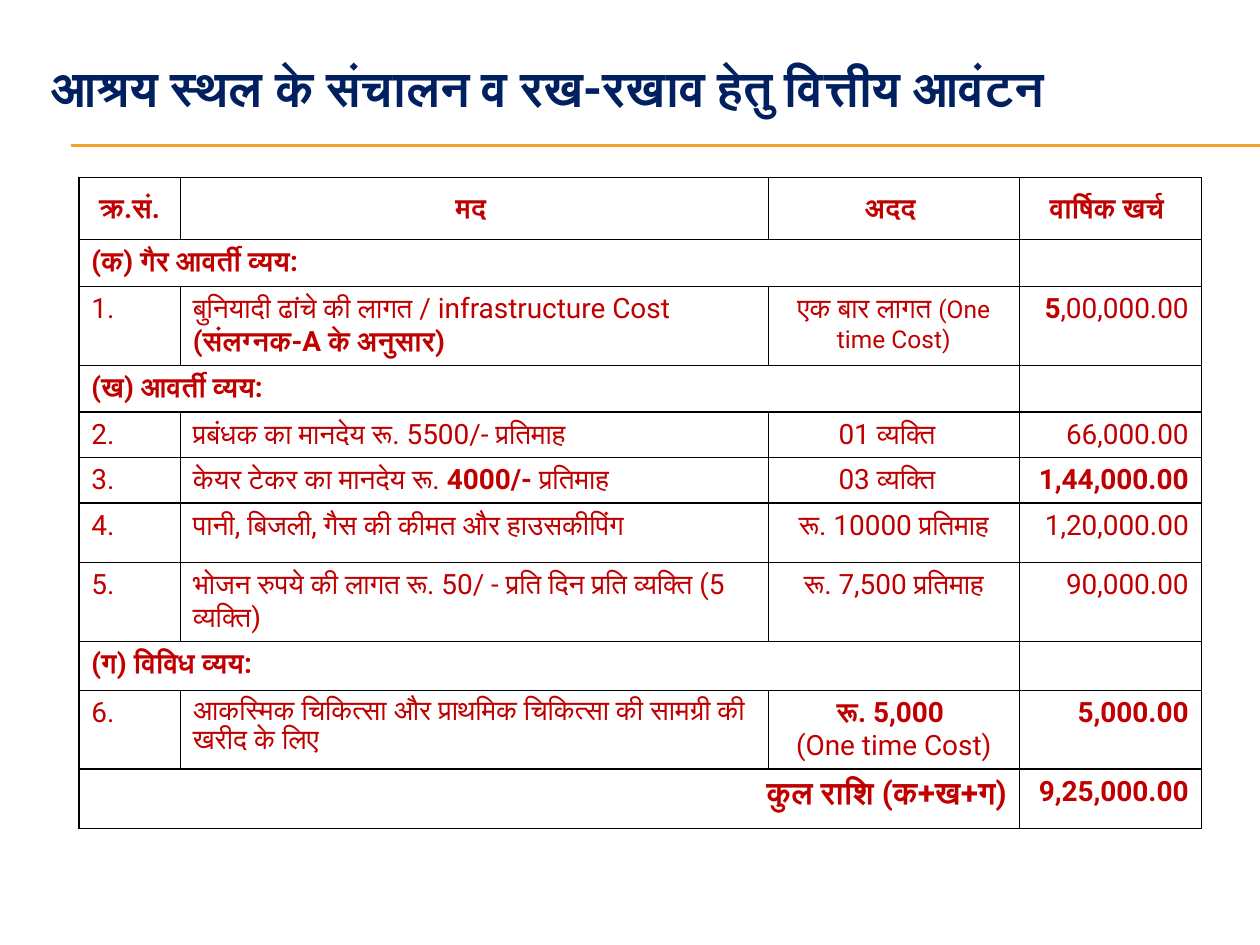
from dataclasses import dataclass

from lxml import etree
from pptx import Presentation
from pptx.dml.color import RGBColor
from pptx.enum.shapes import MSO_CONNECTOR
from pptx.enum.text import MSO_ANCHOR, PP_ALIGN
from pptx.oxml.ns import qn
from pptx.util import Pt

LEFT, CENTER, RIGHT = PP_ALIGN.LEFT, PP_ALIGN.CENTER, PP_ALIGN.RIGHT
TOP, MIDDLE = MSO_ANCHOR.TOP, MSO_ANCHOR.MIDDLE
STRAIGHT = MSO_CONNECTOR.STRAIGHT

COLORS = {"title": "002060", "text": "C00000", "rule": "F0A22E", "border": "000000"}
FONT = "Roboto"
BODY_SIZE = 16


@dataclass
class Span:
    text: str
    bold: bool = False
    size: float = BODY_SIZE


def bold(text, size=BODY_SIZE):
    return Span(text, True, size)


@dataclass
class Cell:
    paras: list
    align: int = LEFT
    anchor: int = TOP
    spacing: float = 1.0


def cell_of(*spans, **options):
    return Cell([list(spans)], **options)


def heading(text):
    return cell_of(bold(text), align=CENTER, anchor=MIDDLE)


def section(text):
    return [cell_of(bold(text)), None, None, cell_of()]


def item(number, purpose, quantity, cost):
    return [cell_of(Span(number)), purpose, quantity, cell_of(*cost, align=RIGHT)]


def centered(*spans):
    return cell_of(*spans, align=CENTER)


class SlideBuilder:
    def __init__(self, page):
        self.page = page

    def fill_para(self, para, spans, color, align, spacing=1.0):
        para.alignment = align
        para.line_spacing = spacing
        if not spans:
            etree.SubElement(para._p, qn("a:endParaRPr"), sz=str(BODY_SIZE * 100))
            return
        runs = []
        for span in spans:
            run = para.add_run()
            run.text = span.text
            runs.append(run)
        font = para.font
        font.name = FONT
        font.color.rgb = RGBColor.from_string(COLORS[color])
        properties = para._p.pPr.find(qn("a:defRPr"))
        etree.SubElement(properties, qn("a:cs"), typeface=FONT)
        for name, convert in (("bold", bool), ("size", Pt)):
            values = [getattr(span, name) for span in spans]
            if len(set(values)) == 1:
                setattr(font, name, convert(values[0]))
            else:
                for run, value in zip(runs, values):
                    setattr(run.font, name, convert(value))

    def title(self, text, left, top, width, height):
        box = self.page.shapes.title
        box.left, box.top, box.width, box.height = map(Pt, (left, top, width, height))
        frame = box.text_frame
        frame.word_wrap = True
        frame.vertical_anchor = MIDDLE
        self.fill_para(frame.paragraphs[0], [bold(text, 28)], "title", LEFT)

    def rule(self, left, right, y):
        line = self.page.shapes.add_connector(STRAIGHT, Pt(left), Pt(y), Pt(right), Pt(y))
        line.line.color.rgb = RGBColor.from_string(COLORS["rule"])
        line.line.width = Pt(0.75)
        etree.SubElement(line._element.spPr, qn("a:effectLst"))

    def borders(self, cell):
        properties = cell._tc.get_or_add_tcPr()
        for side in ("lnL", "lnR", "lnT", "lnB"):
            edge = etree.SubElement(properties, qn("a:" + side), w=str(Pt(1)))
            fill = etree.SubElement(edge, qn("a:solidFill"))
            etree.SubElement(fill, qn("a:srgbClr"), val=COLORS["border"])

    def table(self, rows, left, top, widths, heights):
        frame = self.page.shapes.add_table(
            len(rows), len(widths), Pt(left), Pt(top), Pt(sum(widths)), Pt(sum(heights)))
        table = frame.table
        table.first_row = False
        table.horz_banding = False
        for column, width in zip(table.columns, widths):
            column.width = Pt(width)
        for row_index, (contents, height) in enumerate(zip(rows, heights)):
            table.rows[row_index].height = Pt(height)
            for column_index, content in enumerate(contents):
                cell = table.cell(row_index, column_index)
                self.borders(cell)
                cell.fill.background()
                if content:
                    self.fill_cell(cell, content)
            if None in contents:
                table.cell(row_index, 0).merge(table.cell(row_index, contents.count(None)))

    def fill_cell(self, cell, content):
        cell.vertical_anchor = content.anchor
        frame = cell.text_frame
        for index, spans in enumerate(content.paras):
            para = frame.add_paragraph() if index else frame.paragraphs[0]
            self.fill_para(para, spans, "text", content.align, content.spacing)


ROWS = [
    [heading(text) for text in ("क्र.सं.", "मद ", "अदद ", "वार्षिक खर्च ")],
    section("(क) गैर आवर्ती व्यय:"),
    item("1.",
         cell_of(Span("बुनियादी ढांचे की लागत / infrastructure Cost "),
                 bold("(संलग्नक-A के अनुसार)")),
         centered(Span("एक बार लागत "), Span("(One time Cost)", size=14)),
         [bold("5"), Span(",00,000.00")]),
    section("(ख) आवर्ती व्यय:"),
    item("2.", cell_of(Span("प्रबंधक का मानदेय रू. 5500/- प्रतिमाह")),
         centered(Span("01 व्यक्ति  ")), [Span("66,000.00")]),
    item("3.",
         cell_of(Span("केयर टेकर का मानदेय रू. "), bold("4000/- "), Span("प्रतिमाह")),
         centered(Span("03 व्यक्ति  ")), [bold("1,44,000.00")]),
    item("4.", cell_of(Span("पानी, बिजली, गैस की कीमत और हाउसकीपिंग")),
         centered(Span("रू. 10000 प्रतिमाह")), [Span("1,20,000.00")]),
    item("5.",
         cell_of(Span("भोजन रुपये की लागत रू. 50/ - प्रति दिन प्रति व्यक्ति (5 व्यक्ति)")),
         centered(Span("रू. 7,500 प्रतिमाह")), [Span("90,000.00")]),
    section("(ग) विविध व्यय:"),
    item("6.",
         cell_of(Span("आकस्मिक चिकित्सा और प्राथमिक चिकित्सा की सामग्री की खरीद के लिए"),
                 spacing=0.9),
         Cell([[bold("रू. 5,000 ")], [Span("(One time Cost)")]], align=CENTER),
         [bold("5,000.00")]),
    [cell_of(bold("कुल राशि (क+ख+ग)", 18), align=RIGHT), None, None,
     cell_of(bold("9,25,000.00"), align=RIGHT)],
]


def main():
    deck = Presentation()
    deck.slide_width, deck.slide_height = Pt(720), Pt(540)
    builder = SlideBuilder(deck.slides.add_slide(deck.slide_layouts[5]))
    for y in (82.8, 83.4):
        builder.rule(40.5, 720, y)
    builder.title("आश्रय स्थल के संचालन व रख-रखाव हेतु वित्तीय आवंटन", 22.5, 16.5, 684, 66)
    builder.table(ROWS, 45, 101.5, [58, 336, 143.5, 104],
                  [35.5, 26, 45, 26, 26, 26, 34, 45, 28, 45, 34])
    deck.save("out.pptx")


if __name__ == "__main__":
    main()
